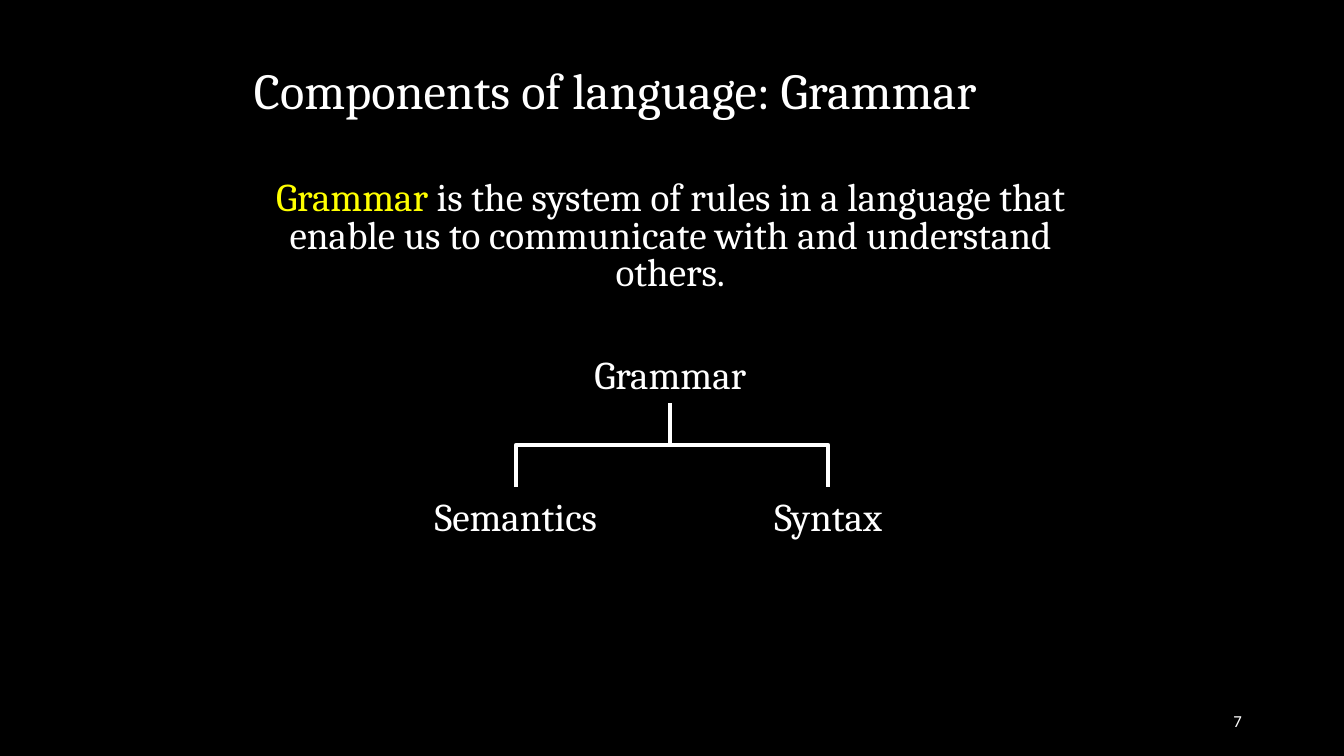
from lxml.etree import SubElement
from pptx import Presentation
from pptx.dml.color import RGBColor
from pptx.enum.shapes import MSO_CONNECTOR
from pptx.enum.text import MSO_ANCHOR, MSO_AUTO_SIZE, PP_ALIGN
from pptx.oxml.ns import qn
from pptx.util import Cm, Pt


def rgb(value):
    return RGBColor.from_string(value)


class GrammarSlide:
    BACK, INK, KEY = "000000", "FFFFFF", "FFFF00"
    SERIF, SANS = "Cambria", "Calibri"

    def __init__(self, prs):
        self.s = prs.slides.add_slide(prs.slide_layouts[6])
        fill = self.s.background.fill
        fill.solid()
        fill.fore_color.rgb = rgb(self.BACK)

    def text(self, box, runs, size=28, font=SERIF, frame=None, para=None):
        """Add a text box; runs is a list of (text, colour)."""
        tf = self.s.shapes.add_textbox(*map(Cm, box)).text_frame
        for name, value in {"word_wrap": True, **(frame or {})}.items():
            setattr(tf, name, value)
        p = tf.paragraphs[0]
        for name, value in (para or {}).items():
            setattr(p, name, value)
        for words, colour in runs:
            r = p.add_run()
            r.text = words
            for name, value in {"size": Pt(size), "name": font}.items():
                setattr(r.font, name, value)
            r.font.color.rgb = rgb(colour)

    def node(self, label, centre, top, width):
        """Add a tree label centred on a given x."""
        self.text((centre - width / 2, top, width, 1.45), [(label, self.INK)],
                  frame={"word_wrap": False,
                         "auto_size": MSO_AUTO_SIZE.SHAPE_TO_FIT_TEXT},
                  para={"alignment": PP_ALIGN.CENTER})

    def branch(self, x1, y1, x2, y2):
        """Add an elbow that leaves and arrives vertically (turned by 270°)."""
        cx, cy = (x1 + x2) / 2, (y1 + y2) / 2
        ends = [(cx - (y - cy), cy + (x - cx)) for x, y in ((x1, y1), (x2, y2))]
        line = self.s.shapes.add_connector(
            MSO_CONNECTOR.ELBOW, *(Cm(v) for end in ends for v in end))
        line.line.color.rgb = rgb(self.INK)
        line.line.width = Pt(3)
        sp_pr = line._element.spPr
        sp_pr.find(qn("a:xfrm")).set("rot", str(270 * 60000))
        SubElement(sp_pr, qn("a:effectLst"))


def main():
    prs = Presentation()
    prs.slide_width, prs.slide_height = Cm(33.87), Cm(19.05)
    g = GrammarSlide(prs)
    middle = {"vertical_anchor": MSO_ANCHOR.MIDDLE}

    # Title, definition and slide number
    g.text((6.15, 0.76, 21.59, 3.18),
           [("Components of language: Grammar", g.INK)], size=36,
           frame=middle, para={"line_spacing": 0.9})
    g.text((6.1, 4.45, 21.59, 3.18),
           [("Grammar", g.KEY),
            (" is the system of rules in a language that enable us to "
             "communicate with and understand others.", g.INK)],
           para={"alignment": PP_ALIGN.CENTER, "line_spacing": 0.8})
    g.text((23.93, 17.65, 7.62, 1.02), [("7", g.INK)], size=12, font=g.SANS,
           frame=middle, para={"alignment": PP_ALIGN.RIGHT})

    # Tree: one root, two leaves
    root_x, root_top, root_bottom, leaf_top = 16.89, 8.71, 10.16, 12.27
    semantics_x, syntax_x = 13, 20.87
    g.node("Grammar", root_x, root_top, 4.78)
    g.node("Syntax", syntax_x, leaf_top, 3.48)
    g.node("Semantics", semantics_x, leaf_top, 4.9)
    g.branch(semantics_x, leaf_top, root_x, root_bottom)
    g.branch(root_x, root_bottom, syntax_x, leaf_top)

    prs.save("out.pptx")


if __name__ == "__main__":
    main()
